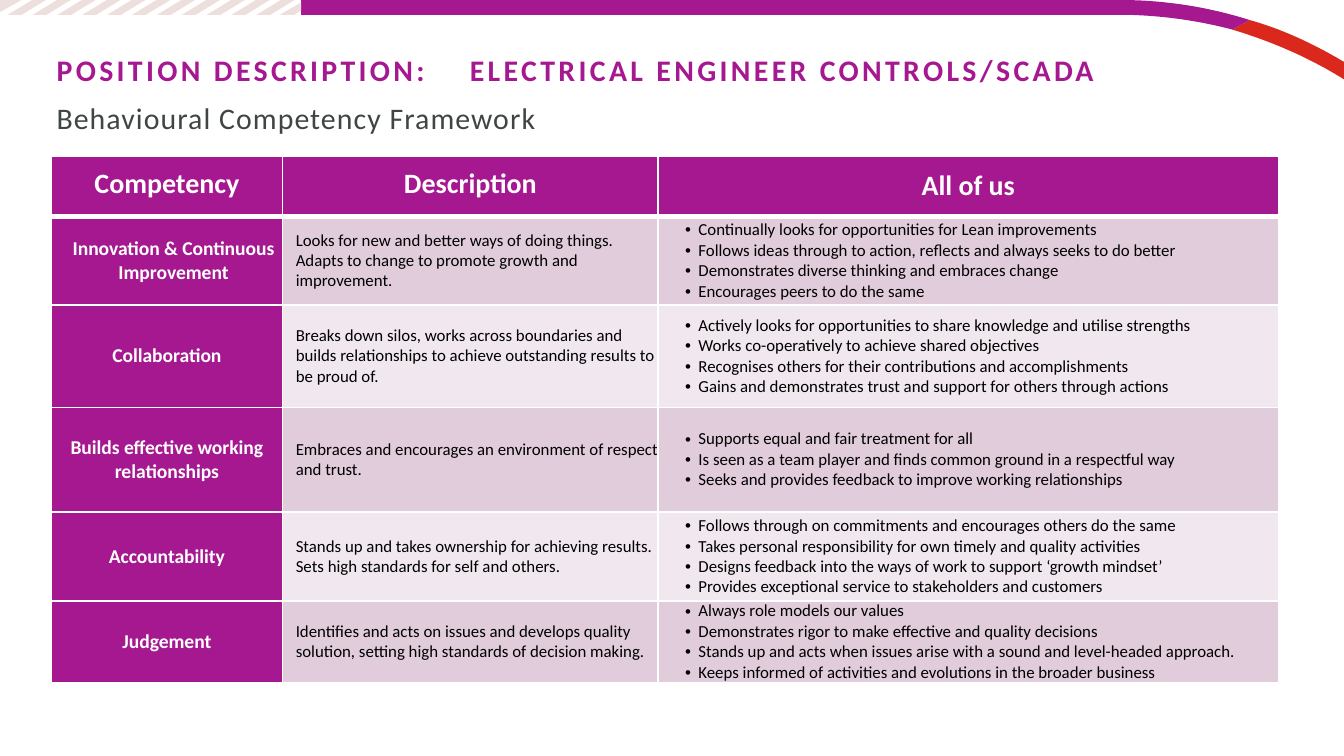
from lxml import etree
from pptx import Presentation
from pptx import util as u
from pptx.dml.color import RGBColor
from pptx.enum import text
from pptx.oxml.ns import qn

PURPLE, RED, STRIPE, GREY = "A51890", "DA291C", "EDDFDE", "3F4543"
WHITE, BLACK = "FFFFFF", "000000"
BANDS = ["E1CCDB", "F0E8EE"]
COLUMNS = [4.37, 7.1, 11.72]
ROWS = [1.14, 1.68, 1.93, 1.98, 1.68, 1.52]
HEADINGS = [("Competency", 0.08), ("Description", 0.08), ("All of us", 0)]
COMPETENCIES = [
    ("Innovation & Continuous Improvement", 0.25,
     "Looks for new and better ways of doing things. Adapts to change to promote growth and improvement.",
     ["Continually looks for opportunities for Lean improvements",
      "Follows ideas through to action, reflects and always seeks to do better",
      "Demonstrates diverse thinking and embraces change",
      "Encourages peers to do the same"]),
    ("Collaboration", 0,
     "Breaks down silos, works across boundaries and builds relationships to achieve outstanding "
     "results to be proud of.",
     ["Actively looks for opportunities to share knowledge and utilise strengths",
      "Works co-operatively to achieve shared objectives",
      "Recognises others for their contributions and accomplishments",
      "Gains and demonstrates trust and support for others through actions"]),
    ("Builds effective working relationships", 0,
     "Embraces and encourages an environment of respect and trust.",
     ["Supports equal and fair treatment for all",
      "Is seen as a team player and finds common ground in a respectful way",
      "Seeks and provides feedback to improve working relationships"]),
    ("Accountability", 0,
     "Stands up and takes ownership for achieving results. Sets high standards for self and others.",
     ["Follows through on commitments and encourages others do the same",
      "Takes personal responsibility for own timely and quality activities",
      "Designs feedback into the ways of work to support ‘growth mindset’",
      "Provides exceptional service to stakeholders and customers"]),
    ("Judgement", 0,
     "Identifies and acts on issues and develops quality solution, setting high standards of decision making.",
     ["Always role models our values",
      "Demonstrates rigor to make effective and quality decisions",
      "Stands up and acts when issues arise with a sound and level-headed approach.",
      "Keeps informed of activities and evolutions in the broader business"]),
]


def paint(fill, color):
    """Give a fill a solid hex colour."""
    fill.solid()
    fill.fore_color.rgb = RGBColor.from_string(color)


def write(para, words, size, color, bold=False, centred=False, spacing=0, indent=0, hanging=0, bullet=None):
    """Write one formatted paragraph."""
    span = para.add_run()
    span.text = words
    span.font.name, span.font.size, span.font.bold = "Calibri", u.Pt(size), bold
    paint(span.font.fill, color)
    if spacing:
        span._r.get_or_add_rPr().set("spc", str(int(spacing * 100)))
    para.alignment = text.PP_ALIGN.CENTER if centred else text.PP_ALIGN.LEFT
    para.space_before = u.Pt(0)
    settings = para._p.get_or_add_pPr()
    settings.set("marL", str(u.Cm(indent)))
    settings.set("indent", str(u.Cm(-hanging)))
    if bullet:
        etree.SubElement(settings, qn("a:buFont")).set("typeface", "Arial")
        etree.SubElement(settings, qn("a:buChar")).set("char", bullet)
    else:
        etree.SubElement(settings, qn("a:buNone"))


def draw_outline(page, left, top, points, color):
    """Draw a filled polygon from points relative to a corner."""
    places = [(u.Cm(left + x), u.Cm(top + y)) for x, y in points]
    builder = page.shapes.build_freeform(*places[0])
    builder.add_line_segments(places[1:], close=True)
    shape = builder.convert_to_shape()
    shape.shadow.inherit = False
    paint(shape.fill, color)
    shape.line.fill.background()


def curve(start, first, second, end, steps=24):
    """Return points along a cubic curve."""
    points = []
    for step in range(steps + 1):
        t = step / steps
        weights = ((1 - t) ** 3, 3 * t * (1 - t) ** 2, 3 * t * t * (1 - t), t ** 3)
        points.append(tuple(sum(w * p[axis] for w, p in zip(weights, (start, first, second, end)))
                            for axis in (0, 1)))
    return points


def add_stripes(page, left, top, width, height):
    """Fill the corner band with slanted stripes."""
    pitch, slant, thick = 0.47, 0.46, 0.26
    outlines = [[(0, 0), (0, 0.08), (0.13, 0)],
                [(0.13, 0), (0, 0.08), (0, 0.23), (0.41, 0)],
                [(width, 0.2), (width, 0.05), (width - 0.4, height), (width - 0.13, height)]]
    for index in range(11):
        x = 0.15 + index * pitch
        outlines.append([(x + slant, 0), (x, height), (x + thick, height), (x + slant + thick, 0)])
    for points in outlines:
        draw_outline(page, left, top, points, STRIPE)


def add_ribbon(page, left, top, width, height):
    """Draw the purple bar and its red tail down to the page edge."""
    upper, lower, thick = (17.93, 0.38), (17.6, 0.56), 0.28
    tail = curve(lower, (18.36, 0.79), (19.05, 1.09), (width, height))
    tail += curve((width, height - 0.33), (19.15, 0.84), (18.57, 0.56), upper)
    bar = curve(upper, (17.14, 0.13), (16.31, 0), (15.44, 0)) + [(0, 0), (0, thick)]
    bar += curve((15.44, thick), (16.18, thick), (16.92, 0.38), lower)
    draw_outline(page, left, top, tail, RED)
    draw_outline(page, left, top, bar, PURPLE)


def fill_placeholder(holder, left, top, width, height, inset, words, **style):
    """Move a placeholder into its box and write its line."""
    holder.left, holder.top, holder.width, holder.height = map(u.Cm, (left, top, width, height))
    frame = holder.text_frame
    frame.auto_size, frame.word_wrap = text.MSO_AUTO_SIZE.NONE, True
    frame.vertical_anchor = text.MSO_ANCHOR.TOP
    frame.margin_left = frame.margin_right = frame.margin_bottom = u.Cm(0.1)
    frame.margin_top = u.Cm(inset)
    write(frame.paragraphs[0], words, **style)


def fill_cell(cell, lines, back, bottom=0, rule=1, **style):
    """Set a cell's borders, fill and paragraphs."""
    settings = cell._tc.get_or_add_tcPr()
    for side, weight in (("L", 1), ("R", 1), ("T", 1), ("B", rule)):
        border = etree.SubElement(settings, qn("a:ln" + side), w=str(u.Pt(weight)))
        solid = etree.SubElement(border, qn("a:solidFill"))
        etree.SubElement(solid, qn("a:srgbClr"), val=WHITE)
    paint(cell.fill, back)
    cell.vertical_anchor = text.MSO_ANCHOR.MIDDLE
    cell.margin_left = cell.margin_right = cell.margin_top = 0
    cell.margin_bottom = u.Cm(bottom)
    frame = cell.text_frame
    for index, words in enumerate(lines):
        write(frame.add_paragraph() if index else frame.paragraphs[0], words, **style)


def add_competencies(page, left, top, width, height):
    """Add the competency table."""
    box = map(u.Cm, (left, top, width, height))
    table = page.shapes.add_table(len(ROWS), len(COLUMNS), *box).table
    table.horz_banding = False
    for column, size in zip(table.columns, COLUMNS):
        column.width = u.Cm(size)
    for row, size in zip(table.rows, ROWS):
        row.height = u.Cm(size)
    label = dict(back=PURPLE, color=WHITE, bold=True, centred=True)
    for index, (heading, bottom) in enumerate(HEADINGS):
        fill_cell(table.cell(0, index), [heading], size=15, bottom=bottom, rule=3, **label)
    for index, (name, indent, description, actions) in enumerate(COMPETENCIES):
        row = index + 1
        body = dict(back=BANDS[index % 2], color=BLACK, size=9)
        fill_cell(table.cell(row, 0), [name], size=10.5, indent=indent, **label)
        fill_cell(table.cell(row, 1), [description], indent=0.25, **body)
        fill_cell(table.cell(row, 2), actions, indent=0.76, hanging=0.25, bullet="•", **body)


def main():
    """Build the deck."""
    deck = Presentation()
    deck.slide_width, deck.slide_height = u.Cm(25.4), u.Cm(14.29)
    page = deck.slides.add_slide(deck.slide_layouts[1])
    add_ribbon(page, 5.69, 0, 19.71, 1.5)
    add_stripes(page, 0, 0, 5.69, 0.28)
    fill_placeholder(page.shapes.title, 0.97, 0.97, 23.19, 0.81, 0,
                     "POSITION DESCRIPTION:\t ELECTRICAL ENGINEER CONTROLS/SCADA",
                     size=16, color=PURPLE, bold=True, spacing=1.8)
    fill_placeholder(page.placeholders[1], 0.97, 1.78, 20.93, 0.76, 0.1,
                     "Behavioural Competency Framework", size=16, color=GREY, spacing=0.6)
    add_competencies(page, 0.97, 2.95, sum(COLUMNS), sum(ROWS))
    deck.save("out.pptx")


if __name__ == "__main__":
    main()
